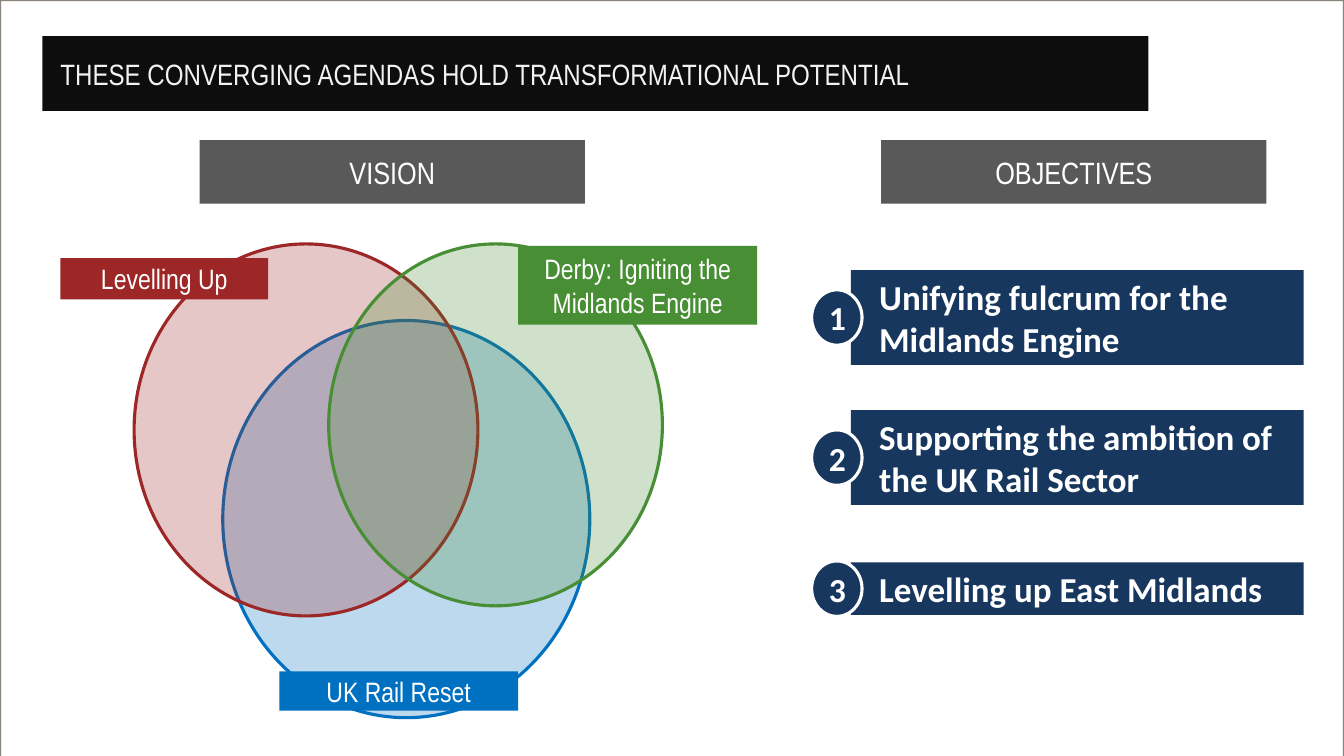
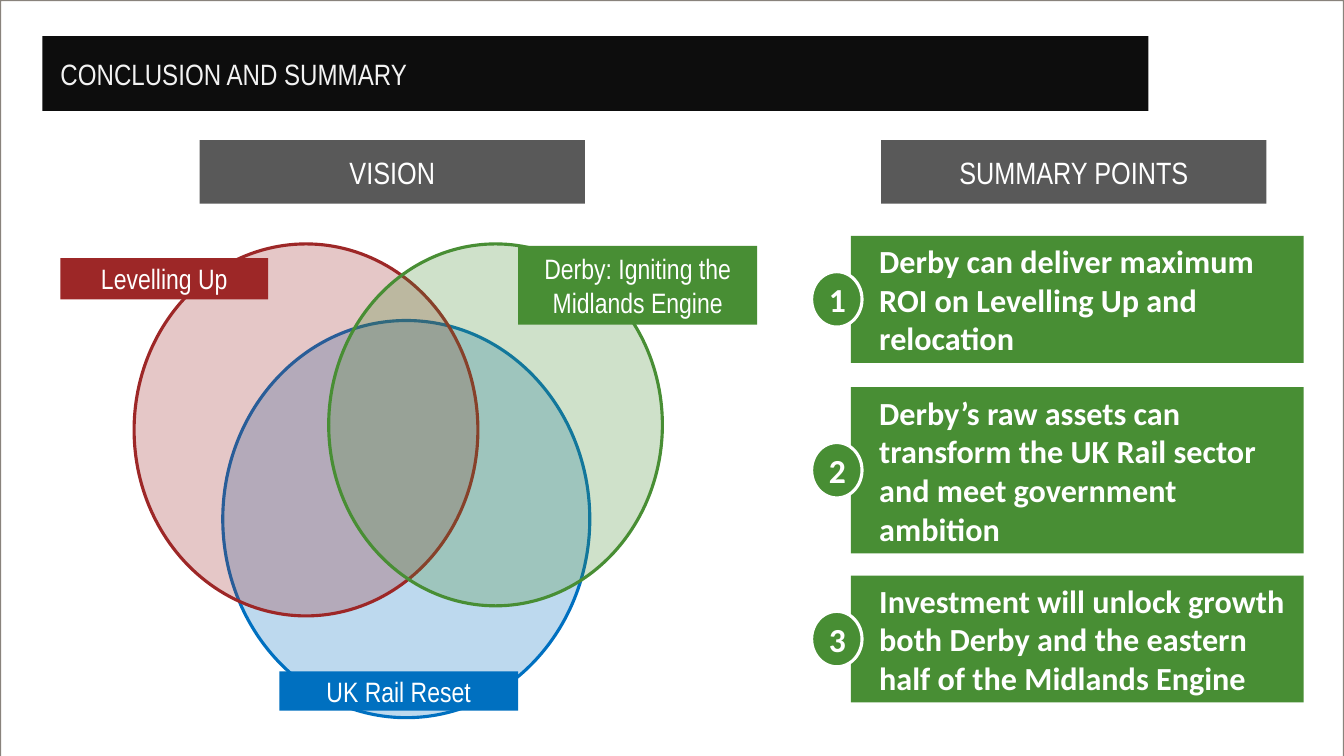
from dataclasses import dataclass

from lxml import etree
from pptx import Presentation
from pptx.dml.color import RGBColor
from pptx.enum.shapes import MSO_SHAPE, PP_PLACEHOLDER
from pptx.enum.text import MSO_ANCHOR, MSO_AUTO_SIZE, PP_ALIGN
from pptx.oxml.ns import qn
from pptx.util import Inches, Pt

RECT, OVAL = MSO_SHAPE.RECTANGLE, MSO_SHAPE.OVAL
LEFT, CENTER = PP_ALIGN.LEFT, PP_ALIGN.CENTER
MIDDLE = MSO_ANCHOR.MIDDLE
FIXED, GROW = MSO_AUTO_SIZE.NONE, MSO_AUTO_SIZE.SHAPE_TO_FIT_TEXT
TITLE = PP_PLACEHOLDER.TITLE
TITLE_ONLY = 5


@dataclass(frozen=True)
class Theme:
    backdrop: str = "AFC1BC"
    frame: str = "584F45"
    white: str = "FFFFFF"
    title_text: str = "F2F2F2"
    band: str = "0D0D0D"
    header: str = "595959"
    red: str = "9D2727"
    green: str = "488E34"
    blue: str = "0070C0"
    navy: str = "17375E"
    narrow: str = "Arial Narrow"
    sans: str = "Calibri"
    title_size: int = 21
    header_size: int = 22
    label_size: int = 20
    badge_size: int = 24
    outline: float = 2.25
    circle_alpha: int = 26
    frame_alpha: int = 70


T = Theme()


@dataclass(frozen=True)
class Box:
    left: float
    top: float
    width: float
    height: float


@dataclass(frozen=True)
class Agenda:
    name: str
    color: str
    circle: Box
    label: Box


@dataclass(frozen=True)
class Point:
    text: str
    top: float
    height: float


@dataclass(frozen=True)
class Page:
    title: str
    header: str
    color: str
    size: int
    points: tuple[Point, ...]


# Listed from the back circle to the front one
AGENDAS = (
    Agenda("UK Rail Reset", T.blue,
           Box(2.21, 3.18, 3.64, 3.94), Box(2.77, 6.66, 2.37, 0.39)),
    Agenda("Levelling Up", T.red,
           Box(1.33, 2.42, 3.41, 3.69), Box(0.6, 2.56, 2.06, 0.41)),
    Agenda("Derby: Igniting the Midlands Engine", T.green,
           Box(3.26, 2.42, 3.31, 3.59), Box(5.14, 2.44, 2.37, 0.78)),
)

PAGES = (
    Page("THESE CONVERGING AGENDAS HOLD TRANSFORMATIONAL POTENTIAL",
         "OBJECTIVES", T.navy, 25, (
             Point("Unifying fulcrum for the Midlands Engine", 2.68, 0.94),
             Point("Supporting the ambition of the UK Rail Sector", 4.07, 0.94),
             Point("Levelling up East Midlands", 5.58, 0.52),
         )),
    Page("CONCLUSION AND SUMMARY",
         "SUMMARY POINTS", T.green, 23, (
             Point("Derby can deliver maximum ROI on Levelling Up and "
                   "relocation", 2.34, 1.26),
             Point("Derby’s raw assets can transform the UK Rail sector and "
                   "meet government ambition", 3.84, 1.65),
             Point("Investment will unlock growth both Derby and the eastern "
                   "half of the Midlands Engine", 5.71, 1.26),
         )),
)


def rgb(value: str) -> RGBColor:
    return RGBColor.from_string(value)


def set_alpha(fill, percent: int) -> None:
    """Make a solid shape fill or line fill partly transparent."""
    color = fill._xPr.find(qn("a:solidFill"))[0]
    etree.SubElement(color, qn("a:alpha")).set("val", str(percent * 1000))


def place(sp, box: Box) -> None:
    sp.left, sp.top = Inches(box.left), Inches(box.top)
    sp.width, sp.height = Inches(box.width), Inches(box.height)


def add_shape(slide, kind, box: Box, color: str, *, alpha: int = 100,
              line: str = "", line_width: float = T.outline,
              line_alpha: int = 100):
    sp = slide.shapes.add_shape(kind, 0, 0, 0, 0)
    place(sp, box)
    sp.shadow.inherit = False
    sp.fill.solid()
    sp.fill.fore_color.rgb = rgb(color)
    if alpha < 100:
        set_alpha(sp.fill, alpha)
    if line:
        sp.line.color.rgb = rgb(line)
        sp.line.width = Pt(line_width)
        if line_alpha < 100:
            set_alpha(sp.line.fill, line_alpha)
    else:
        sp.line.fill.background()
    return sp


def write(sp, text: str, *, size: float, font: str = T.narrow,
          color: str = T.white, bold: bool = False, align=CENTER,
          inset_left: float = 0.12, inset_right: float = 0.12,
          auto_size=FIXED) -> None:
    tf = sp.text_frame
    tf.word_wrap = True
    tf.auto_size = auto_size
    tf.vertical_anchor = MIDDLE
    tf.margin_left, tf.margin_right = Inches(inset_left), Inches(inset_right)
    tf.margin_top = tf.margin_bottom = Inches(0.05)
    p = tf.paragraphs[0]
    p.alignment = align
    r = p.add_run()
    r.text = text
    r.font.name, r.font.size, r.font.bold = font, Pt(size), bold
    r.font.color.rgb = rgb(color)


def set_up_layout(layout, slide) -> None:
    """Give the layout the frame, title band and title position."""
    for ph in list(layout.placeholders):
        if ph.placeholder_format.type == TITLE:
            place(ph, Box(0.6, 0.53, 10.91, 0.41))
        else:
            ph.element.getparent().remove(ph.element)
    frame = add_shape(slide, RECT, Box(0, 0, 13.33, 7.55), T.white,
                      line=T.frame, line_width=1.5, line_alpha=T.frame_alpha)
    band = add_shape(slide, RECT, Box(0.42, 0.36, 10.97, 0.74), T.band)
    for index, sp in enumerate((frame, band), start=2):
        layout.shapes.element.insert(index, sp.element)


def add_header(slide, left: float, text: str) -> None:
    sp = add_shape(slide, RECT, Box(left, 1.39, 3.82, 0.63), T.header)
    write(sp, text, size=T.header_size)


def add_venn(slide) -> None:
    for agenda in AGENDAS:
        add_shape(slide, OVAL, agenda.circle, agenda.color,
                  alpha=T.circle_alpha, line=agenda.color)
    for agenda in AGENDAS:
        sp = add_shape(slide, RECT, agenda.label, agenda.color)
        write(sp, agenda.name, size=T.label_size)


def add_point(slide, number: int, point: Point, page: Page) -> None:
    """Draw a text bar with its number badge centred on the left edge."""
    bar = add_shape(slide, RECT, Box(8.44, point.top, 4.49, point.height),
                    page.color)
    write(bar, point.text, size=page.size, font=T.sans, bold=True, align=LEFT,
          inset_left=0.28, inset_right=0.1, auto_size=GROW)
    badge_height = 0.55
    badge_top = point.top + (point.height - badge_height) / 2
    badge = add_shape(slide, OVAL, Box(8.05, badge_top, 0.5, badge_height),
                      page.color, line=T.white)
    write(badge, str(number), size=T.badge_size, font=T.sans, bold=True,
          inset_left=0.1, inset_right=0.1)


def fill_slide(slide, page: Page) -> None:
    write(slide.shapes.title, page.title, size=T.title_size,
          color=T.title_text, align=LEFT, inset_left=0, inset_right=0.1)
    add_venn(slide)
    for number, point in enumerate(page.points, start=1):
        add_point(slide, number, point, page)
    add_header(slide, 1.98, "VISION")
    add_header(slide, 8.74, page.header)


def main() -> None:
    prs = Presentation()
    prs.slide_width, prs.slide_height = Inches(13.33), Inches(7.5)
    backdrop = prs.slide_master.background.fill
    backdrop.solid()
    backdrop.fore_color.rgb = rgb(T.backdrop)

    layout = prs.slide_layouts[TITLE_ONLY]
    slides = [prs.slides.add_slide(layout) for _ in PAGES]
    set_up_layout(layout, slides[0])
    for slide, page in zip(slides, PAGES):
        fill_slide(slide, page)
    prs.save("out.pptx")


if __name__ == "__main__":
    main()
